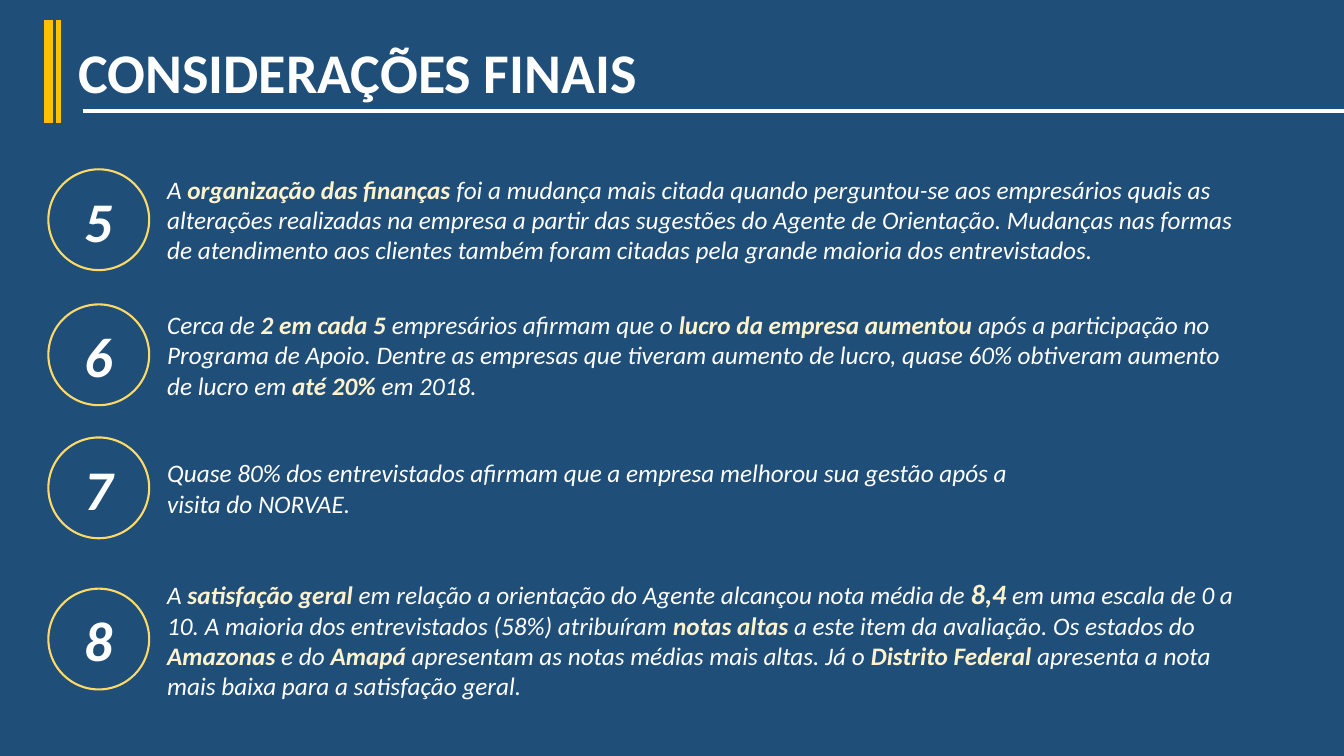
from dataclasses import dataclass
from pptx import Presentation
from pptx.dml.color import RGBColor as RGB
from pptx.enum.shapes import MSO_CONNECTOR as CONN, MSO_SHAPE as SHAPE
from pptx.enum.text import MSO_ANCHOR as ANCHOR, PP_ALIGN as ALIGN
from pptx.oxml.ns import qn
from pptx.util import Pt
from lxml import etree

PX = 9144


@dataclass(frozen=True)
class Theme:
    font: str = "Calibri"
    back: RGB = RGB(0x1F, 0x4E, 0x79)
    white: RGB = RGB(0xFF, 0xFF, 0xFF)
    gold: RGB = RGB(0xFF, 0xC0, 0x00)
    ring: RGB = RGB(0xFF, 0xD9, 0x66)
    accent: RGB = RGB(0xFF, 0xF2, 0xCC)
    heading: int = 40
    body: int = 18
    figure: int = 20


T = Theme()
FIGURE = "8,4"
ROWS = [
    ("5", 168, 101, "A |organização das finanças |foi a mudança mais citada quando "
     "perguntou-se aos empresários quais as alterações realizadas na empresa a partir das "
     "sugestões do Agente de Orientação. Mudanças nas formas de atendimento aos clientes "
     "também foram citadas pela grande maioria dos entrevistados."),
    ("6", 302, 101, "Cerca de |2 em cada 5| empresários afirmam que o |lucro da empresa "
     "aumentou |após a participação no Programa de Apoio. Dentre as empresas que tiveram "
     "aumento de lucro, quase 60% obtiveram aumento de lucro em |até 20% |em 2018."),
    ("7", 449, 71, "Quase 80% dos entrevistados afirmam que a empresa melhorou sua gestão "
     "após a\nvisita do NORVAE."),
    ("8", 567, 135, "A |satisfação geral |em relação a orientação do Agente alcançou nota "
     "média de |8,4| em uma escala de 0 a 10. A maioria dos entrevistados (58%) atribuíram "
     "|notas altas |a este item da avaliação. Os estados do |Amazonas| e do |Amapá| "
     "apresentam as notas médias mais altas. Já o |Distrito Federal |apresenta a nota mais "
     "baixa para a satisfação geral."),
]


def style(r, size, color, bold=False, italic=False):
    f = r.font
    f.name, f.size, f.bold, f.italic = T.font, Pt(size), bold, italic
    f.color.rgb = color


def add_line(s, x1, y1, x2, y2, color, width):
    sp = s.shapes.add_connector(CONN.STRAIGHT, x1 * PX, y1 * PX, x2 * PX, y2 * PX)
    sp.line.color.rgb = color
    sp.line.width = Pt(width)
    etree.SubElement(sp._element.spPr, qn("a:effectLst"))


def add_text(s, x, y, w, h):
    tf = s.shapes.add_textbox(x * PX, y * PX, w * PX, h * PX).text_frame
    tf.word_wrap = True
    return tf


def add_header(s, x, y, w, h):
    add_line(s, x, y, x, y + h, T.gold, 6)
    add_line(s, x + 10, y, x + 10, y + h, T.gold, 3)
    add_line(s, x + 34, y + 90, x + w, y + 90, T.white, 3)
    tf = add_text(s, x + 20, y + 12, 853, 77)
    tf.text = "CONSIDERAÇÕES FINAIS"
    style(tf.paragraphs[0].runs[0], T.heading, T.white, bold=True)


def add_badge(s, x, y, size, number):
    sp = s.shapes.add_shape(SHAPE.OVAL, x * PX, y * PX, size * PX, size * PX)
    sp.shadow.inherit = False
    sp.fill.background()
    sp.line.color.rgb = T.ring
    sp.line.width = Pt(1.5)
    tf = sp.text_frame
    tf.text = number
    tf.vertical_anchor = ANCHOR.MIDDLE
    p = tf.paragraphs[0]
    p.alignment = ALIGN.CENTER
    style(p.runs[0], T.heading, T.white, bold=True, italic=True)


def add_row(s, x, y, w, h, number, text, badge=100, gap=8):
    add_badge(s, x, y + (h - badge) // 2, badge, number)
    left = badge + gap
    tf = add_text(s, x + left, y, w - left, h)
    for i, line in enumerate(text.split("\n")):
        p = tf.add_paragraph() if i else tf.paragraphs[0]
        for j, piece in enumerate(line.split("|")):
            strong = j % 2 == 1
            r = p.add_run()
            r.text = piece
            style(r, T.figure if piece == FIGURE else T.body,
                  T.accent if strong else T.white, bold=strong, italic=True)


def main():
    prs = Presentation()
    prs.slide_width, prs.slide_height = 1333 * PX, 750 * PX
    s = prs.slides.add_slide(prs.slide_layouts[6])
    s.background.fill.solid()
    s.background.fill.fore_color.rgb = T.back
    add_header(s, 48, 20, 1285, 102)
    for number, top, height, text in ROWS:
        add_row(s, 48, top, 1199, height, number, text)
    prs.save("out.pptx")


if __name__ == "__main__":
    main()
